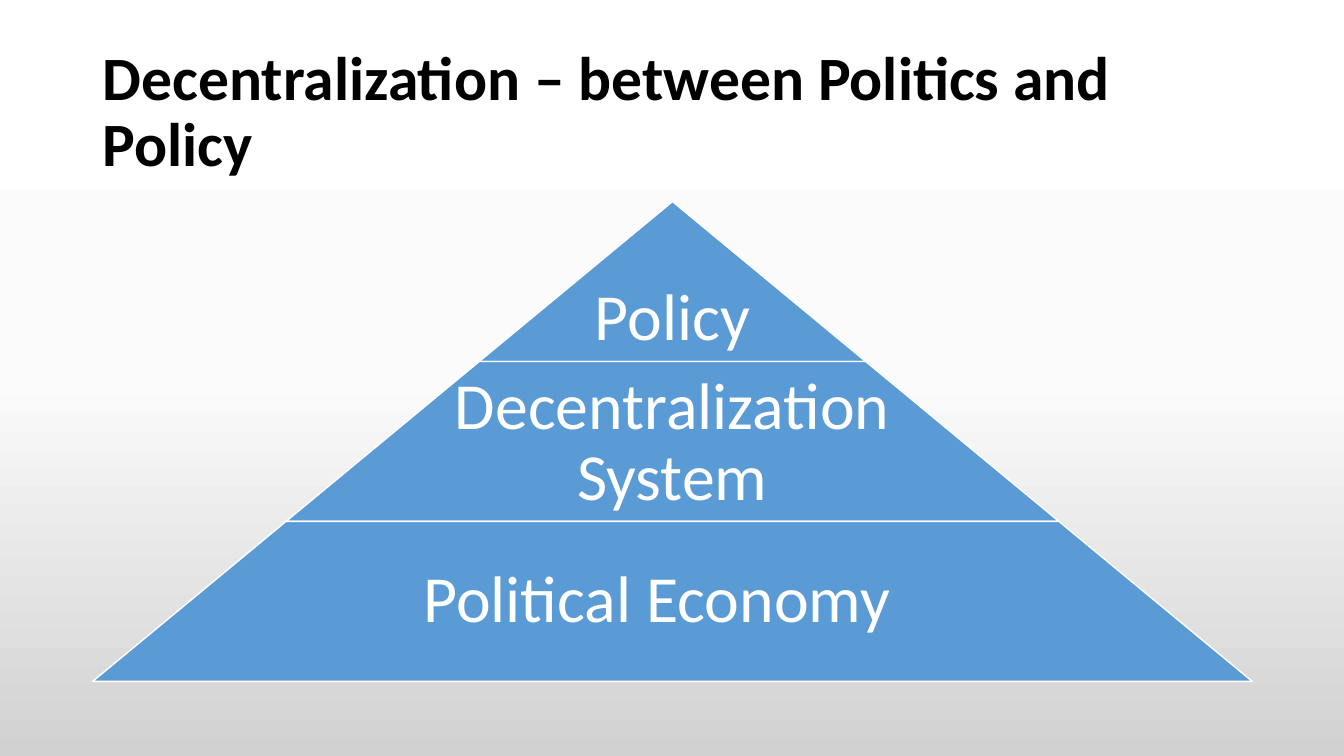
from copy import deepcopy

from pptx import Presentation
from pptx.dml.color import RGBColor
from pptx.enum.shapes import MSO_SHAPE as Shape
from pptx.enum.text import MSO_ANCHOR as Anchor, MSO_AUTO_SIZE as Fit, PP_ALIGN as Align
from pptx.oxml.ns import qn
from pptx.util import Inches, Pt

TITLE = "Decentralization – between Politics and Policy"
TIERS = [
    ("Policy", 1, Anchor.BOTTOM, 0.07),
    ("Decentralization System", 0.65, Anchor.BOTTOM, 0.07),
    ("Political Economy", 0.65, Anchor.MIDDLE, 0.38),
]
STOPS = [(0, "FFFFFF"), (0.5, "FBFBFB"), (1, "D1D1D1")]
BLUE, WHITE, BLACK = "5B9BD5", "FFFFFF", "000000"
LEFT, TOP, WIDE, HIGH = 0.92, 2, 11.5, 4.76
PAD = 0.07


def color(code):
    return RGBColor.from_string(code)


def write(frame, text, size=47, ink=WHITE, bold=False, align=Align.CENTER,
          anchor=Anchor.MIDDLE, pads=None):
    frame.word_wrap = True
    frame.auto_size = Fit.NONE
    frame.vertical_anchor = anchor
    if pads:
        (frame.margin_left, frame.margin_top,
         frame.margin_right, frame.margin_bottom) = map(Inches, pads)
    para = frame.paragraphs[0]
    para.alignment = align
    para.line_spacing = 0.9
    run = para.add_run()
    run.text = text
    font = run.font
    font.name, font.size, font.bold = "Calibri", Pt(size), bold
    font.color.rgb = color(ink)


def paint(slide):
    fill = slide.background.fill
    fill.gradient()
    fill.gradient_angle = 270
    stops = next(slide.element.iter(qn("a:gsLst")))
    stops.append(deepcopy(stops[-1]))
    for stop, (place, code) in zip(fill.gradient_stops, STOPS):
        stop.position = place
        stop.color.rgb = color(code)


def build(slide):
    step = HIGH / len(TIERS)
    mid = LEFT + WIDE / 2
    slant = WIDE / 2 / HIGH
    for i, (text, share, anchor, right) in enumerate(TIERS):
        top = TOP + i * step
        wide = WIDE * (i + 1) / len(TIERS)
        tier = slide.shapes.add_shape(
            Shape.TRAPEZOID, Inches(mid - wide / 2), Inches(top),
            Inches(wide), Inches(step))
        tier.adjustments[0] = slant
        tier.shadow.inherit = False
        tier.fill.solid()
        tier.fill.fore_color.rgb = color(BLUE)
        tier.line.color.rgb = color(WHITE)
        tier.line.width = Pt(1)
        span = wide * share
        box = slide.shapes.add_textbox(
            Inches(mid - span / 2), Inches(top), Inches(span), Inches(step))
        write(box.text_frame, text, anchor=anchor, pads=(PAD, PAD, right, PAD))


def main():
    deck = Presentation()
    deck.slide_width, deck.slide_height = Inches(13.33), Inches(7.5)
    slide = deck.slides.add_slide(deck.slide_layouts[5])
    paint(slide)
    title = slide.shapes.title
    title.left, title.top = Inches(LEFT), Inches(0.4)
    title.width, title.height = Inches(WIDE), Inches(1.45)
    write(title.text_frame, TITLE, size=44, ink=BLACK, bold=True, align=Align.LEFT)
    build(slide)
    deck.save("out.pptx")


if __name__ == "__main__":
    main()
